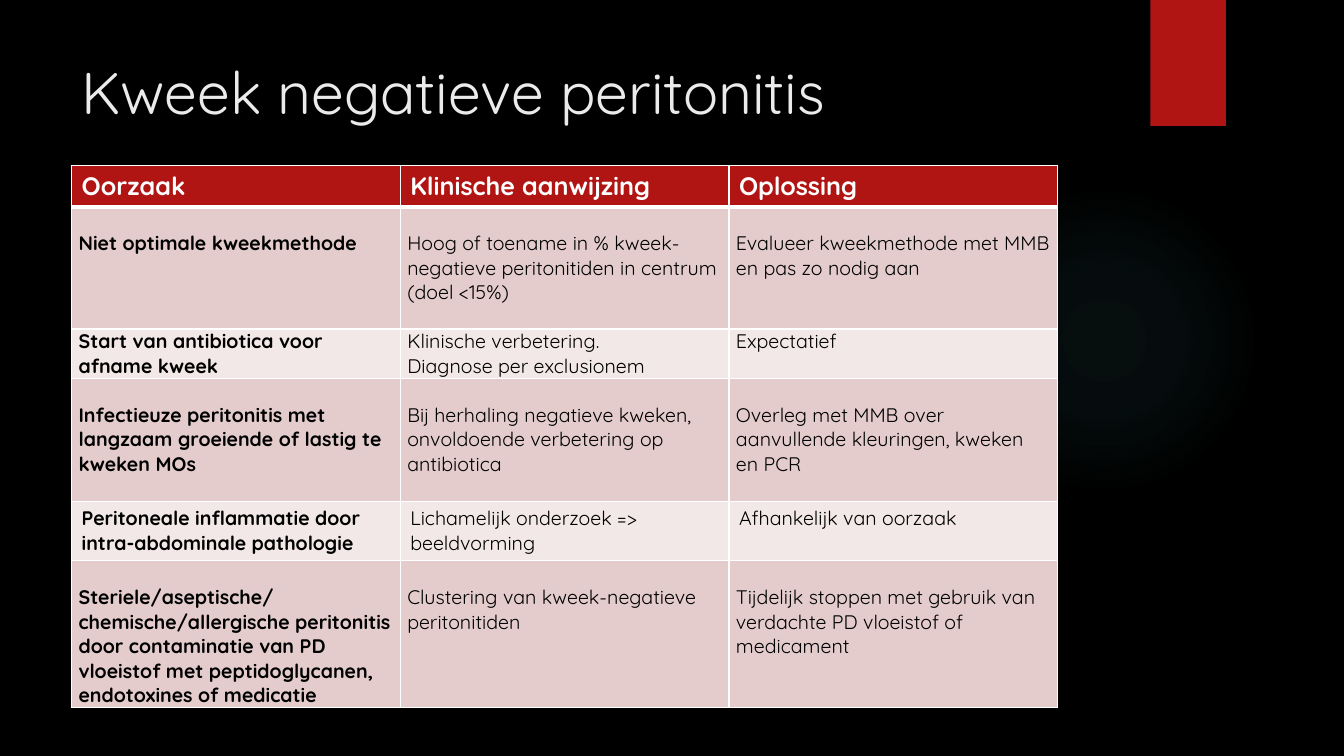
"""Build the slide on causes of culture-negative peritonitis."""
from dataclasses import dataclass

from lxml import etree
from pptx import Presentation, oxml
from pptx import util as u
from pptx.dml.color import RGBColor
from pptx.enum import shapes, text
from pptx.oxml.ns import nsdecls, qn
from pptx.shapes.autoshape import Shape
from pptx.slide import Slide
from pptx.table import _Cell
from pptx.text.text import TextFrame


@dataclass(frozen=True)
class Theme:
    """Colours, font and type sizes of the slide."""
    font: str = "Quicksand"
    background: str = "000000"
    accent: str = "B01513"
    glow: str = "50B9C1"
    title: str = "EBEBEB"
    header: str = "FFFFFF"
    body: str = "000000"
    rule: str = "FFFFFF"
    bands: tuple[str, str] = ("E4CCCC", "F2E8E7")
    title_size: float = 42
    header_size: float = 18
    body_size: float = 14


@dataclass(frozen=True)
class Cause:
    """One table row: cause, clinical clue and solution."""
    cause: str
    clue: str
    solution: str
    height: float
    side: float = 0.07
    top: float = 0.24
    bottom: float = 0


THEME = Theme()
HEADINGS = ("Oorzaak", "Klinische aanwijzing", "Oplossing")
HEADER_HEIGHT = 0.41
CAUSES = (
    Cause("Niet optimale kweekmethode",
          "Hoog of toename in % kweek-negatieve peritonitiden in centrum (doel <15%)",
          "Evalueer kweekmethode met MMB en pas zo nodig aan", 1.21),
    Cause("Start van antibiotica voor afname kweek",
          "Klinische verbetering.\nDiagnose per exclusionem",
          "Expectatief", 0.49, top=0),
    Cause("Infectieuze peritonitis met langzaam groeiende of lastig te kweken MOs",
          "Bij herhaling negatieve kweken, onvoldoende verbetering op antibiotica",
          "Overleg met MMB over aanvullende kleuringen, kweken en PCR", 1.22),
    Cause("Peritoneale inflammatie door intra-abdominale pathologie",
          "Lichamelijk onderzoek => beeldvorming",
          "Afhankelijk van oorzaak", 0.59, side=0.1, top=0.05, bottom=0.05),
    Cause("Steriele/aseptische/chemische/allergische peritonitis door contaminatie van PD "
          "vloeistof met peptidoglycanen, endotoxines of medicatie",
          "Clustering van kweek-negatieve peritonitiden",
          "Tijdelijk stoppen met gebruik van verdachte PD vloeistof of medicament", 1.46),
)


def write(frame: TextFrame, words: str, *, size: float, color: str, bold: bool = False) -> None:
    """Fill a text frame with left-aligned paragraphs in one format."""
    frame.text = words
    for paragraph in frame.paragraphs:
        paragraph.alignment = text.PP_ALIGN.LEFT
        for run in paragraph.runs:
            run.font.name = THEME.font
            run.font.size = u.Pt(size)
            run.font.bold = bold
            run.font.color.rgb = RGBColor.from_string(color)


def add_plain(slide: Slide, kind: shapes.MSO_SHAPE, left: float, top: float,
              width: float, height: float, color: str) -> Shape:
    """Add a filled shape without outline or shadow."""
    shape = slide.shapes.add_shape(
        kind, u.Inches(left), u.Inches(top), u.Inches(width), u.Inches(height))
    shape.shadow.inherit = False
    shape.line.fill.background()
    shape.fill.solid()
    shape.fill.fore_color.rgb = RGBColor.from_string(color)
    return shape


def add_glow(slide: Slide) -> None:
    """Add the faint round glow at the right."""
    glow = add_plain(slide, shapes.MSO_SHAPE.OVAL, 9.41, 1.83, 3.08, 3.08, THEME.glow)
    stops = "".join(
        f'<a:gs pos="{place * 1000}"><a:srgbClr val="{THEME.glow}">'
        f'<a:alpha val="{alpha * 1000}"/></a:srgbClr></a:gs>'
        for place, alpha in ((0, 7), (36, 6), (69, 0)))
    gradient = oxml.parse_xml(
        f'<a:gradFill {nsdecls("a")}><a:gsLst>{stops}</a:gsLst><a:path path="circle">'
        '<a:fillToRect l="50000" t="50000" r="50000" b="50000"/></a:path></a:gradFill>')
    properties = glow._element.spPr
    properties.replace(properties.find(qn("a:solidFill")), gradient)


def add_ribbon(slide: Slide) -> None:
    """Add the red ribbon at the top edge with its soft shadow."""
    ribbon = add_plain(slide, shapes.MSO_SHAPE.RECTANGLE, 11.41, 0, 0.75, 1.25, THEME.accent)
    ribbon._element.spPr.find(qn("a:effectLst")).append(oxml.parse_xml(
        f'<a:outerShdw {nsdecls("a")} blurRad="{u.Pt(3)}" dist="{u.Pt(2)}" dir="5400000">'
        '<a:srgbClr val="000000"><a:alpha val="45000"/></a:srgbClr></a:outerShdw>'))


def style_cell(cell: _Cell, fill: str, *, above: float = 1, below: float = 1) -> None:
    """Give a cell its four borders and its fill."""
    properties = cell._tc.get_or_add_tcPr()
    for side, width in (("L", 1), ("R", 1), ("T", above), ("B", below)):
        border = etree.SubElement(properties, qn(f"a:ln{side}"), w=str(u.Pt(width)))
        paint = etree.SubElement(border, qn("a:solidFill"))
        etree.SubElement(paint, qn("a:srgbClr"), val=THEME.rule)
    cell.fill.solid()
    cell.fill.fore_color.rgb = RGBColor.from_string(fill)


def add_causes(slide: Slide) -> None:
    """Add the table of causes, clues and solutions."""
    heights = [HEADER_HEIGHT, *(cause.height for cause in CAUSES)]
    table = slide.shapes.add_table(
        len(heights), len(HEADINGS), u.Inches(0.71), u.Inches(1.64),
        u.Inches(9.78), u.Inches(sum(heights))).table
    for row, height in zip(table.rows, heights):
        row.height = u.Inches(height)
    for column, heading in enumerate(HEADINGS):
        cell = table.cell(0, column)
        style_cell(cell, THEME.accent, below=3)
        write(cell.text_frame, heading, size=THEME.header_size, color=THEME.header, bold=True)
    for index, cause in enumerate(CAUSES):
        for column, words in enumerate((cause.cause, cause.clue, cause.solution)):
            cell = table.cell(index + 1, column)
            style_cell(cell, THEME.bands[index % 2], above=3 if index == 0 else 1)
            cell.margin_left = cell.margin_right = u.Inches(cause.side)
            cell.margin_top = u.Inches(cause.top)
            cell.margin_bottom = u.Inches(cause.bottom)
            write(cell.text_frame, words, size=THEME.body_size, color=THEME.body,
                  bold=column == 0)


def add_title(slide: Slide) -> None:
    """Place and format the title."""
    title = slide.shapes.title
    title.left, title.top = u.Inches(0.71), u.Inches(0.5)
    title.width, title.height = u.Inches(10.29), u.Inches(1.53)
    title.text_frame.vertical_anchor = text.MSO_ANCHOR.TOP
    write(title.text_frame, "Kweek negatieve peritonitis",
          size=THEME.title_size, color=THEME.title)


def main() -> None:
    """Build and save the presentation."""
    deck = Presentation()
    deck.slide_width, deck.slide_height = u.Inches(13.33), u.Inches(7.5)
    slide = deck.slides.add_slide(deck.slide_layouts[5])
    slide.background.fill.solid()
    slide.background.fill.fore_color.rgb = RGBColor.from_string(THEME.background)
    add_glow(slide)
    add_ribbon(slide)
    add_title(slide)
    add_causes(slide)
    deck.save("out.pptx")


if __name__ == "__main__":
    main()
